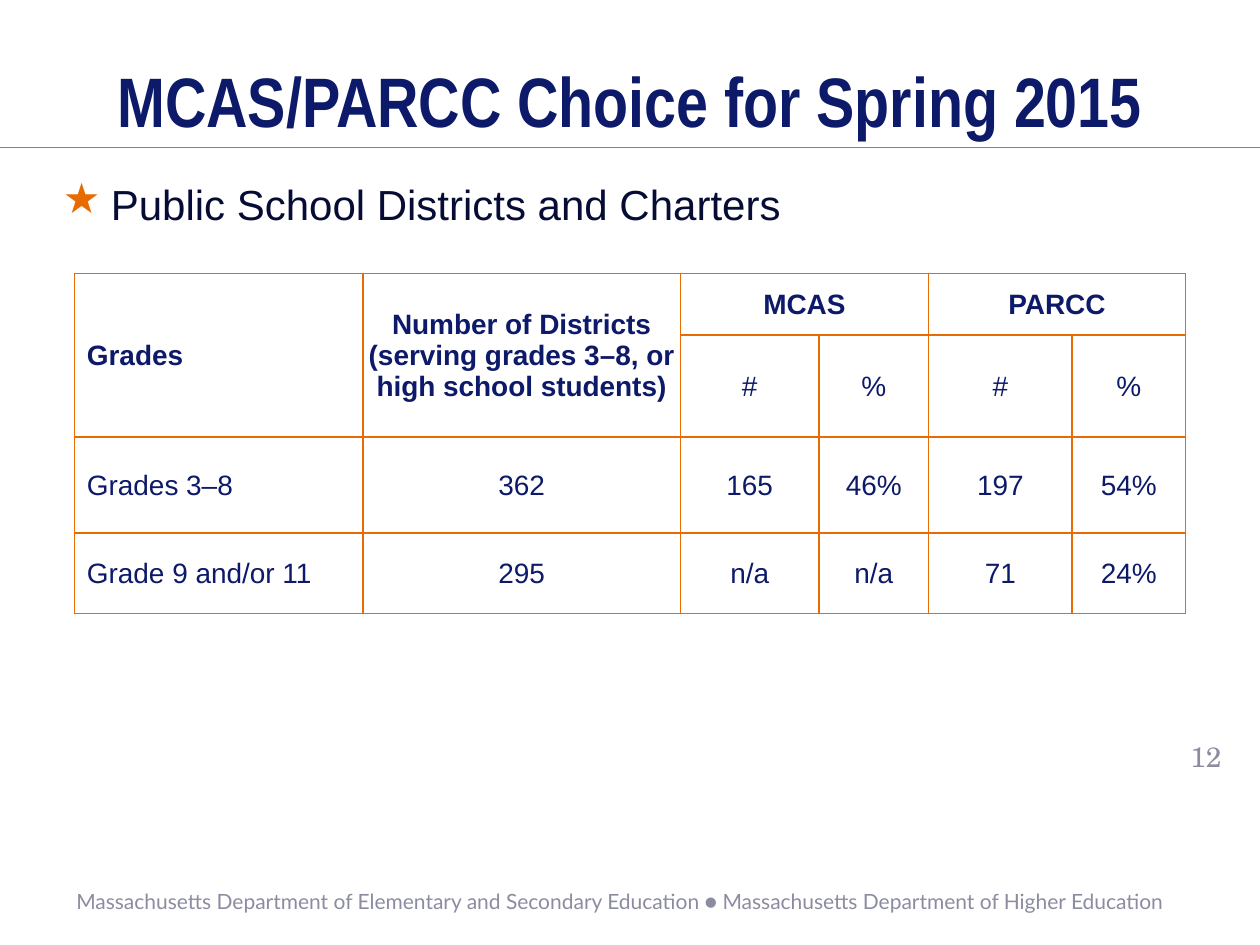
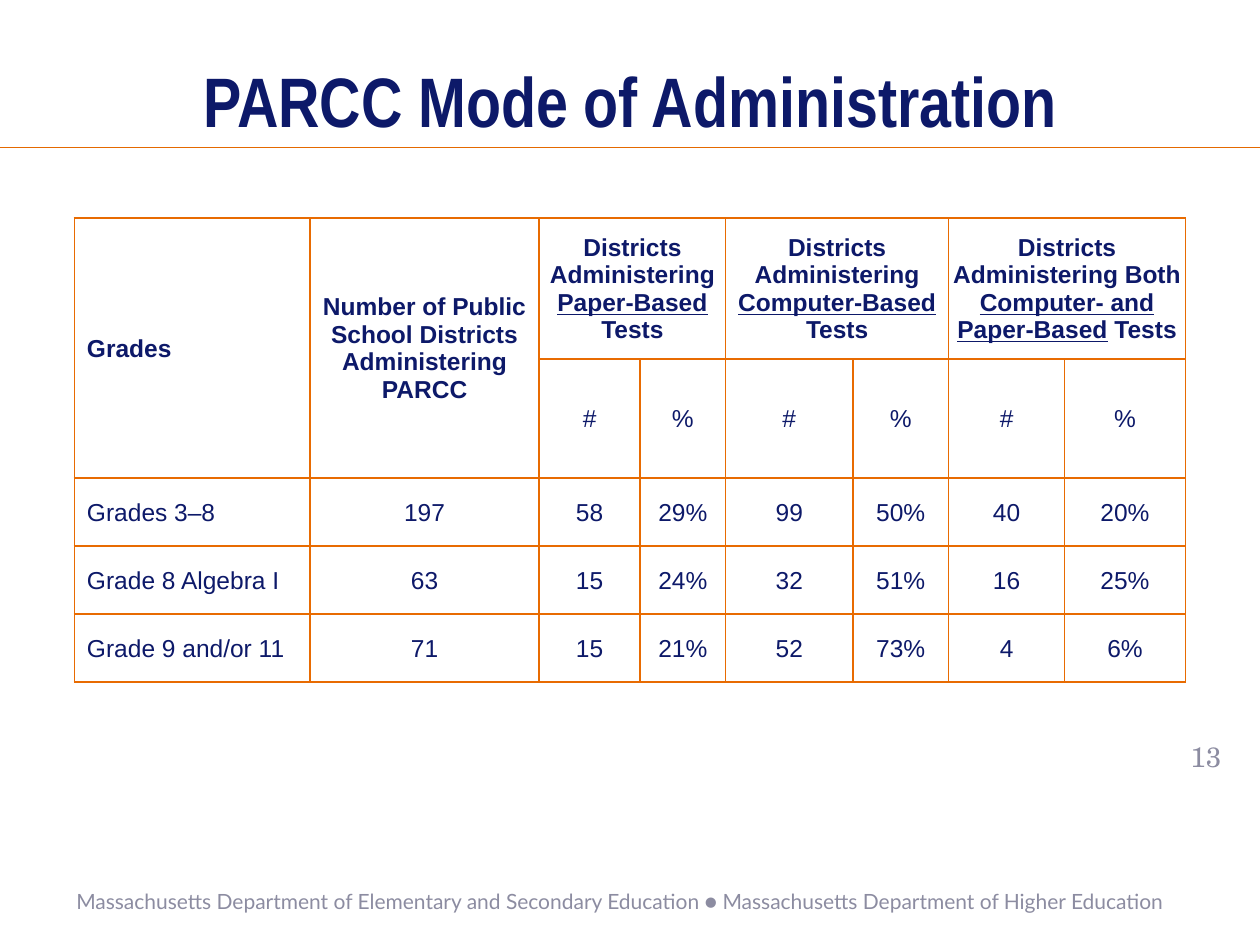
from dataclasses import dataclass
from typing import Any

import lxml.etree
import pptx
import pptx.dml.color
import pptx.enum.shapes
import pptx.enum.text
import pptx.oxml.ns
import pptx.util

RGBColor = pptx.dml.color.RGBColor
Align = pptx.enum.text.PP_ALIGN
Anchor = pptx.enum.text.MSO_ANCHOR
Pt = pptx.util.Pt
qn = pptx.oxml.ns.qn

# Shared look
NAVY = RGBColor(0x0D, 0x19, 0x69)
INK = RGBColor(0x06, 0x0C, 0x34)
ORANGE = RGBColor(0xE8, 0x6B, 0x01)
RULE_ORANGE = RGBColor(0xE4, 0x69, 0x00)
GRAY = RGBColor(0x8C, 0x8C, 0xA1)
WHITE = RGBColor(0xFF, 0xFF, 0xFF)
FOOTER = ("Massachusetts Department of Elementary and Secondary Education ● "
          "Massachusetts Department of Higher Education")

# Slide grid: 100 columns by 75 rows
WIDTH, HEIGHT = pptx.util.Inches(10), pptx.util.Inches(7.5)
COLUMNS, ROWS = 100, 75
RULE_ROW = 11.7
TABLE_LEFT = 5.9


def col(n: float) -> int:
    return round(WIDTH * n / COLUMNS)


def row(n: float) -> int:
    return round(HEIGHT * n / ROWS)


@dataclass(frozen=True)
class Box:
    left: float
    top: float
    width: float
    height: float


@dataclass(frozen=True)
class Grid:
    """A table whose first two columns have headings two rows deep."""
    top: float
    size: int
    col_widths: list[float]
    row_heights: list[float]
    headings: list[str]
    groups: list[str]
    data: list[list[str]]


@dataclass(frozen=True)
class Page:
    number: int
    title: str
    grid: Grid
    bullet: str = ""


TITLE_BOX = Box(0, 1.7, 100, 10)
BODY_BOX = Box(0, 13.7, 100, 55.4)
FOOTER_BOX = Box(4.2, 69.5, 89.2, 4)
NUMBER_BOX = Box(92.8, 57.5, 5.8, 5)

PAGES = [
    Page(12, "MCAS/PARCC Choice for Spring 2015", Grid(
        top=21.7, size=16,
        col_widths=[22.9, 25.2, 11, 8.7, 11.4, 9],
        row_heights=[4.9, 4, 7.6, 6.4],
        headings=["Grades",
                  "Number of Districts (serving grades 3–8, or high school students)"],
        groups=["MCAS", "PARCC"],
        data=[["Grades 3–8", "362", "165", "46%", "197", "54%"],
              ["Grade 9 and/or 11", "295", "n/a", "n/a", "71", "24%"]],
    ), bullet="Public School Districts and Charters"),
    # Underscores enclose underlined words
    Page(13, "PARCC Mode of Administration", Grid(
        top=17.3, size=14,
        col_widths=[18.7, 18.2, 8, 6.8, 10.1, 7.6, 9.2, 9.6],
        row_heights=[11.2, 3.1, 5.4, 5.4, 5.4],
        headings=["Grades", "Number of Public School Districts Administering PARCC"],
        groups=["Districts Administering _Paper-Based_ Tests",
                "Districts Administering _Computer-Based_ Tests",
                "Districts Administering Both _Computer- and Paper-Based_ Tests"],
        data=[["Grades 3–8", "197", "58", "29%", "99", "50%", "40", "20%"],
              ["Grade 8 Algebra I", "63", "15", "24%", "32", "51%", "16", "25%"],
              ["Grade 9 and/or 11", "71", "15", "21%", "52", "73%", "4", "6%"]],
    )),
]


def write(p: Any, text: str, *, size: int, font: str = "Arial",
          color: RGBColor = NAVY, bold: bool = False,
          align: Align = Align.CENTER) -> None:
    p.alignment = align
    for i, part in enumerate(text.split("_")):
        if part:
            r = p.add_run()
            r.text = part
            r.font.size, r.font.name = Pt(size), font
            r.font.bold, r.font.underline = bold, i % 2 == 1
            r.font.color.rgb = color


def add_text(slide: Any, box: Box, text: str, *, anchor: Anchor = Anchor.MIDDLE,
             **style: Any) -> Any:
    sp = slide.shapes.add_textbox(col(box.left), row(box.top),
                                  col(box.width), row(box.height))
    tf = sp.text_frame
    tf.word_wrap, tf.vertical_anchor = True, anchor
    write(tf.paragraphs[0], text, **style)
    return tf


def add_rule(slide: Any) -> None:
    line = slide.shapes.add_connector(pptx.enum.shapes.MSO_CONNECTOR.STRAIGHT,
                                      0, row(RULE_ROW), WIDTH, row(RULE_ROW))
    line.line.color.rgb, line.line.width = RULE_ORANGE, Pt(0.75)
    lxml.etree.SubElement(line._element.spPr, qn("a:effectLst"))


def add_star_bullet(slide: Any, text: str) -> None:
    tf = add_text(slide, BODY_BOX, text, anchor=Anchor.TOP, size=24,
                  color=INK, align=Align.LEFT)
    tf.margin_left = tf.margin_right = col(5)
    pPr = tf.paragraphs[0]._p.get_or_add_pPr()
    pPr.set("marL", str(col(3.8)))
    pPr.set("indent", str(-col(3.8)))
    color = lxml.etree.SubElement(pPr, qn("a:buClr"))
    lxml.etree.SubElement(color, qn("a:srgbClr"), val=str(ORANGE))
    lxml.etree.SubElement(pPr, qn("a:buChar"), char="★")


def format_cell(cell: Any, first_column: bool) -> None:
    cell.vertical_anchor = Anchor.MIDDLE
    cell.margin_left = col(1 if first_column else 0.1)
    cell.margin_right, cell.margin_top, cell.margin_bottom = col(0.1), row(0.1), 0
    tcPr = cell._tc.get_or_add_tcPr()
    for side in ("a:lnL", "a:lnR", "a:lnT", "a:lnB"):
        ln = lxml.etree.SubElement(tcPr, qn(side), w=str(Pt(1)))
        fill = lxml.etree.SubElement(ln, qn("a:solidFill"))
        lxml.etree.SubElement(fill, qn("a:srgbClr"), val=str(ORANGE))
    cell.fill.solid()
    cell.fill.fore_color.rgb = WHITE


def add_grid(slide: Any, grid: Grid) -> None:
    frame = slide.shapes.add_table(
        len(grid.row_heights), len(grid.col_widths), col(TABLE_LEFT), row(grid.top),
        col(sum(grid.col_widths)), row(sum(grid.row_heights)))
    table = frame.table
    table.first_row = table.horz_banding = False
    for column, width in zip(table.columns, grid.col_widths):
        column.width = col(width)
    for table_row, height in zip(table.rows, grid.row_heights):
        table_row.height = row(height)

    # Two heading rows, then the data
    spread = [text for group in grid.groups for text in (group, "")]
    lines = [grid.headings + spread, ["", ""] + ["#", "%"] * len(grid.groups), *grid.data]
    for i, line in enumerate(lines):
        for j, text in enumerate(line):
            cell = table.cell(i, j)
            format_cell(cell, j == 0)
            write(cell.text_frame.paragraphs[0], text, size=grid.size, bold=i == 0,
                  align=Align.LEFT if j == 0 else Align.CENTER)
    for j in range(len(grid.headings)):
        table.cell(0, j).merge(table.cell(1, j))
    for j in range(len(grid.headings), len(grid.col_widths), 2):
        table.cell(0, j).merge(table.cell(0, j + 1))


def add_page(prs: Any, page: Page) -> None:
    slide = prs.slides.add_slide(prs.slide_layouts[6])
    add_rule(slide)
    add_text(slide, TITLE_BOX, page.title, anchor=Anchor.BOTTOM, size=40,
             font="Arial Narrow", bold=True)
    if page.bullet:
        add_star_bullet(slide, page.bullet)
    add_text(slide, FOOTER_BOX, FOOTER, size=12, font="Lato", color=GRAY,
             align=Align.RIGHT)
    add_text(slide, NUMBER_BOX, str(page.number), size=16,
             font="TeX Gyre Schola", color=GRAY)
    add_grid(slide, page.grid)


def main() -> None:
    prs = pptx.Presentation()
    prs.slide_width, prs.slide_height = WIDTH, HEIGHT
    for page in PAGES:
        add_page(prs, page)
    prs.save("out.pptx")


if __name__ == "__main__":
    main()
